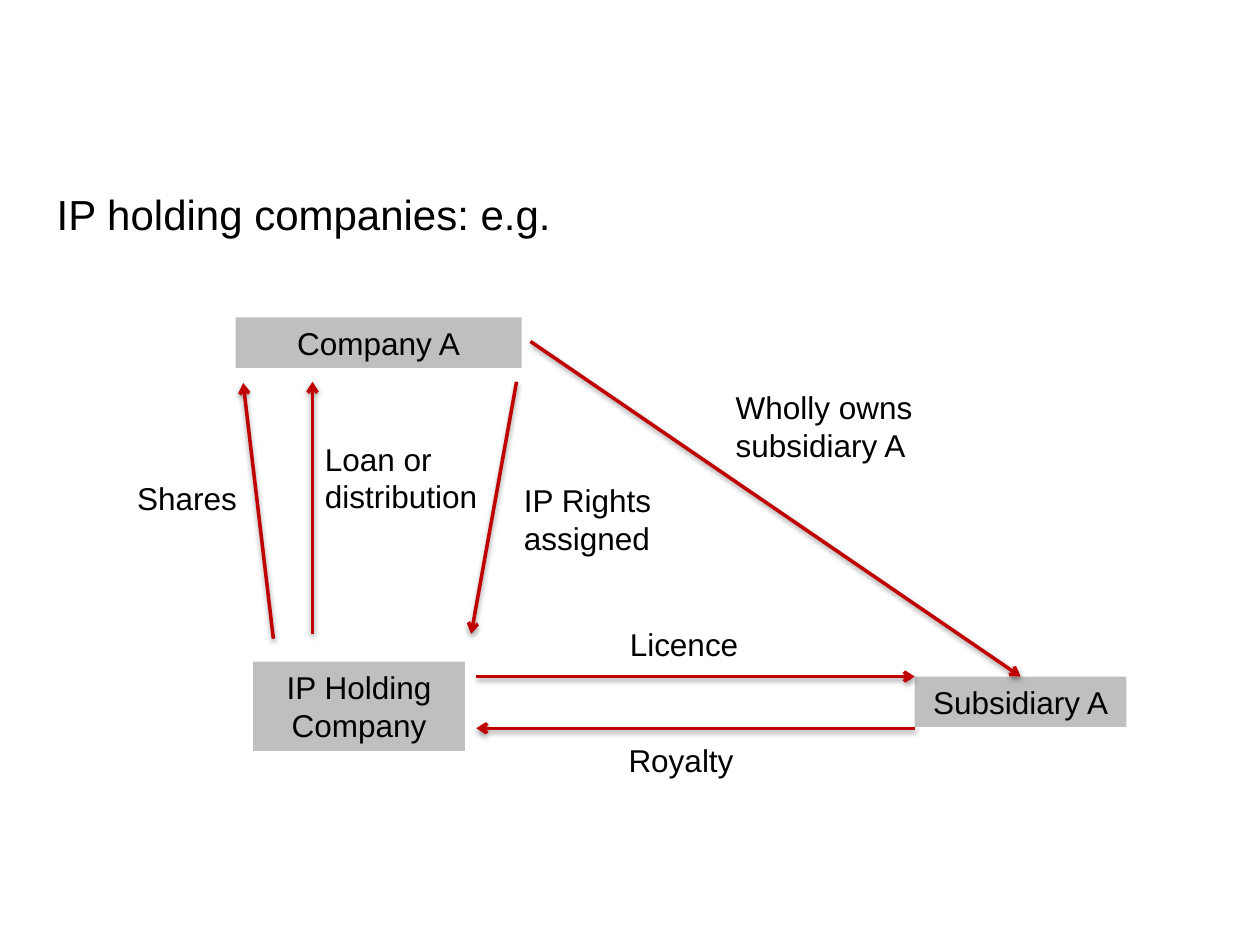
from pptx import Presentation, util as u
from pptx.dml.color import RGBColor
from pptx.enum import shapes, text
from pptx.oxml import parse_xml
from pptx.oxml.ns import nsdecls

COLORS = {"text": "000000", "box": "BFBFBF", "arrow": "C00000"}
SHADOW = (
    f'<a:effectLst {nsdecls("a")}>'
    '<a:outerShdw blurRad="40000" dist="20000" dir="5400000" rotWithShape="0">'
    '<a:srgbClr val="000000"><a:alpha val="38000"/></a:srgbClr>'
    '</a:outerShdw></a:effectLst>'
)


def rgb(name):
    return RGBColor.from_string(COLORS[name])


class Sketch:
    """Holds the style and the current slide."""

    font = {"name": "Arial", "size": u.Pt(18), "bold": False}

    def __init__(self, deck):
        self.slide = deck.slides.add_slide(deck.slide_layouts[5])
        self.shapes = self.slide.shapes

    def fill_text(self, shape, words, align, **style):
        frame = shape.text_frame
        frame.word_wrap = True
        frame.text = words
        para = frame.paragraphs[0]
        para.alignment = align
        for key, value in {**self.font, **style}.items():
            setattr(para.font, key, value)
        para.font.color.rgb = rgb("text")
        return frame

    def title(self, words, *place):
        shape = self.shapes.title
        for key, value in zip(("left", "top", "width", "height"), place):
            setattr(shape, key, u.Inches(value))
        frame = self.fill_text(shape, words, text.PP_ALIGN.LEFT, size=u.Pt(24))
        frame.vertical_anchor = text.MSO_ANCHOR.MIDDLE

    def box(self, words, *place):
        shape = self.shapes.add_shape(
            shapes.MSO_SHAPE.RECTANGLE, *map(u.Inches, place))
        shape.shadow.inherit = False
        shape.fill.solid()
        shape.fill.fore_color.rgb = rgb("box")
        shape.line.fill.background()
        frame = self.fill_text(shape, words, text.PP_ALIGN.CENTER)
        frame.vertical_anchor = text.MSO_ANCHOR.TOP
        return shape

    def label(self, words, *place):
        shape = self.shapes.add_textbox(*map(u.Inches, place))
        self.fill_text(shape, words, text.PP_ALIGN.LEFT)

    def arrow(self, *ends, goal=None):
        """Draw from start to end; goal is a box joined at its top."""
        line = self.shapes.add_connector(
            shapes.MSO_CONNECTOR.STRAIGHT, *map(u.Inches, ends))
        if goal is not None:
            line.end_connect(goal, 0)
        line.line.color.rgb = rgb("arrow")
        line.line.width = u.Pt(2)
        line.line._get_or_add_ln().append(
            parse_xml(f'<a:tailEnd {nsdecls("a")} type="arrow"/>'))
        line._element.spPr.append(parse_xml(SHADOW))


def main():
    deck = Presentation()
    deck.slide_width, deck.slide_height = u.Inches(10), u.Inches(7.5)
    sketch = Sketch(deck)
    sketch.title("IP holding companies: e.g.", 0.35, 1.39, 8.13, 0.61)

    sketch.box("IP Holding Company", 2.01, 5.25, 1.68, 0.71)
    unit = sketch.box("Subsidiary A", 7.26, 5.37, 1.68, 0.4)
    sketch.box("Company A", 1.87, 2.52, 2.27, 0.4)

    for ends in (
        (2.48, 5.03, 2.48, 3.03),
        (2.17, 5.07, 1.93, 3.04),
        (4.1, 3.03, 3.74, 5.03),
        (3.78, 5.37, 7.26, 5.37),
        (7.26, 5.78, 3.78, 5.78),
    ):
        sketch.arrow(*ends)
    sketch.arrow(4.21, 2.71, 8.1, 5.37, goal=unit)

    for words, *place in (
        ("Loan or distribution", 2.48, 3.44, 1.72, 0.71),
        ("Shares", 0.99, 3.75, 1.26, 0.4),
        ("IP Rights assigned", 4.06, 3.77, 1.37, 0.71),
        ("Wholly owns subsidiary A", 5.74, 3.03, 1.94, 0.71),
        ("Licence", 4.9, 4.91, 1.37, 0.4),
        ("Royalty", 4.89, 5.83, 1.7, 0.4),
    ):
        sketch.label(words, *place)
    deck.save("out.pptx")


if __name__ == "__main__":
    main()
